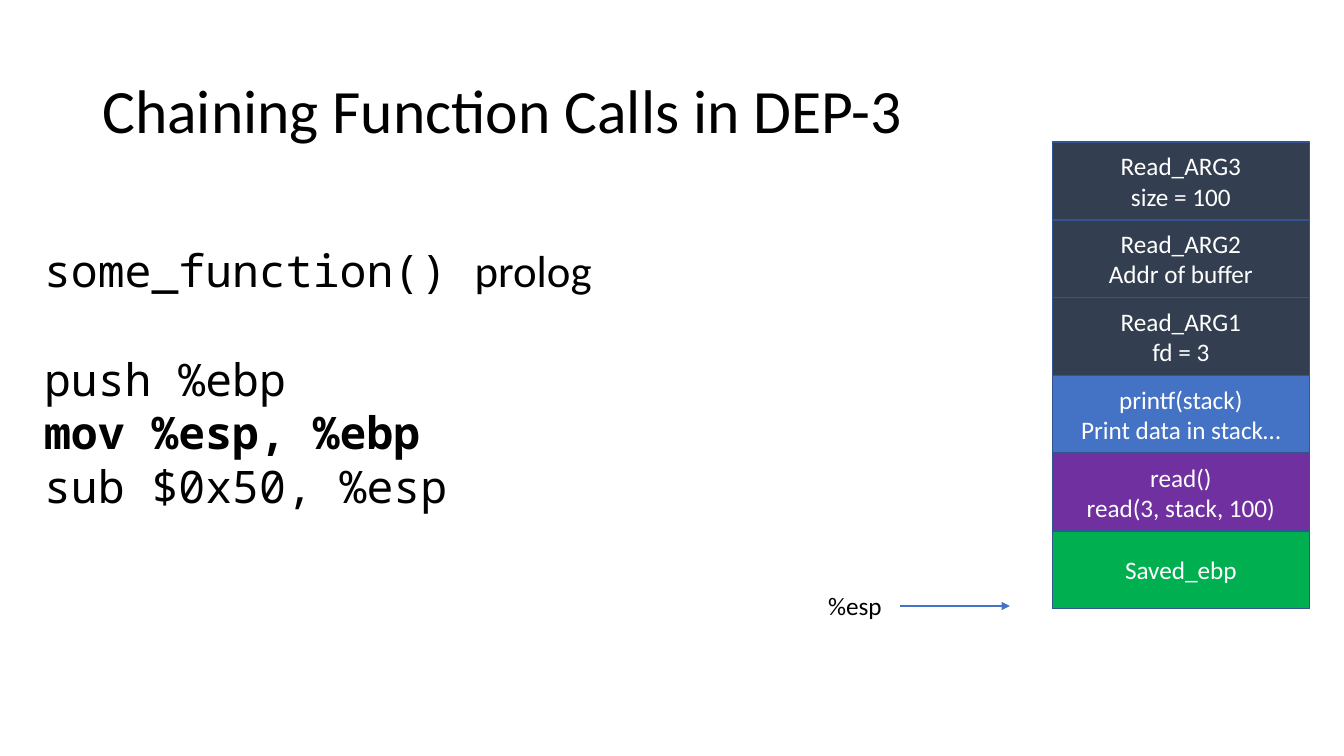
"""Build the slide on chaining function calls, with its stack diagram."""
from typing import NamedTuple

from lxml.etree import SubElement as Sub
from pptx import Presentation
from pptx.dml.color import RGBColor as Rgb
from pptx.enum.shapes import MSO_CONNECTOR as Link, MSO_SHAPE as Form
from pptx.enum.text import MSO_ANCHOR as Anchor, PP_ALIGN as Align
from pptx.oxml.ns import qn
from pptx.shapes.autoshape import Shape
from pptx.slide import Slide
from pptx.util import Cm, Pt

SANS = "Calibri"
MONO = "Noto Sans Mono"
BLACK = "000000"
WHITE = "FFFFFF"
BLUE = "4472C4"
SLATE = "333F50"
EDGE = "325491"


class Cell(NamedTuple):
    text: str
    fill: str


class Label(NamedTuple):
    text: str
    left: float
    top: float
    width: float
    height: float
    size: int
    face: str = SANS
    wrap: bool = True
    anchor: Anchor = Anchor.TOP


STACK = [
    Cell("Read_ARG3\nsize = 100", SLATE),
    Cell("Read_ARG2\nAddr of buffer", SLATE),
    Cell("Read_ARG1\nfd = 3", SLATE),
    Cell("printf(stack)\nPrint data in stack…", BLUE),
    Cell("read()\nread(3, stack, 100)", "7030A0"),
    Cell("Saved_ebp", "00B050"),
]
TITLE = Label("Chaining Function Calls in DEP-3", 2.33, 1.01, 29.21, 3.68, 44,
              anchor=Anchor.MIDDLE)
CODE = Label("some_function() \npush %ebp\nmov %esp, %ebp\nsub $0x50, %esp",
             0.86, 6, 16.61, 7.09, 32, MONO)
MARK = Label("%esp", 20.62, 14.76, 1.88, 1.02, 18, wrap=False)


def color(code: str) -> Rgb:
    return Rgb.from_string(code)


def style(shape: Shape, size: int, face: str, tint: str) -> None:
    for para in shape.text_frame.paragraphs:
        for run in para.runs:
            run.font.size = Pt(size)
            run.font.name = face
            run.font.color.rgb = color(tint)


def write(slide: Slide, label: Label) -> Shape:
    box = slide.shapes.add_textbox(Cm(label.left), Cm(label.top),
                                   Cm(label.width), Cm(label.height))
    frame = box.text_frame
    frame.text = label.text
    frame.word_wrap = label.wrap
    frame.vertical_anchor = label.anchor
    style(box, label.size, label.face, BLACK)
    return box


def code(slide: Slide) -> None:
    box = write(slide, CODE)
    head, push, move, _ = box.text_frame.paragraphs
    word = head.add_run()
    word.text = "prolog"
    word.font.size = Pt(CODE.size)
    word.font.name = SANS
    word.font.color.rgb = color(BLACK)
    push.space_before = Pt(39)
    move.runs[0].font.bold = True


def stack(slide: Slide) -> None:
    step = 1.96
    for row, cell in enumerate(STACK):
        box = slide.shapes.add_shape(Form.RECTANGLE, Cm(26.52),
                                     Cm(3.58 + row * step), Cm(6.48), Cm(step))
        box.shadow.inherit = False
        box.fill.solid()
        box.fill.fore_color.rgb = color(cell.fill)
        box.line.color.rgb = color(EDGE)
        box.line.width = Pt(1)
        frame = box.text_frame
        frame.text = cell.text
        frame.vertical_anchor = Anchor.MIDDLE
        for para in frame.paragraphs:
            para.alignment = Align.CENTER
        style(box, 18, SANS, WHITE)


def arrow(slide: Slide) -> None:
    line = slide.shapes.add_connector(Link.STRAIGHT, Cm(22.68), Cm(15.27),
                                      Cm(25.45), Cm(15.27))
    line.line.color.rgb = color(BLUE)
    line.line.width = Pt(1.5)
    Sub(line.line._get_or_add_ln(), qn("a:tailEnd"), type="triangle")
    Sub(line._element.spPr, qn("a:effectLst"))


def main() -> None:
    deck = Presentation()
    deck.slide_width = Cm(33.87)
    deck.slide_height = Cm(19.05)
    slide = deck.slides.add_slide(deck.slide_layouts[6])
    title = write(slide, TITLE)
    title.text_frame.paragraphs[0].line_spacing = 0.9
    stack(slide)
    write(slide, MARK)
    arrow(slide)
    code(slide)
    deck.save("out.pptx")


if __name__ == "__main__":
    main()
